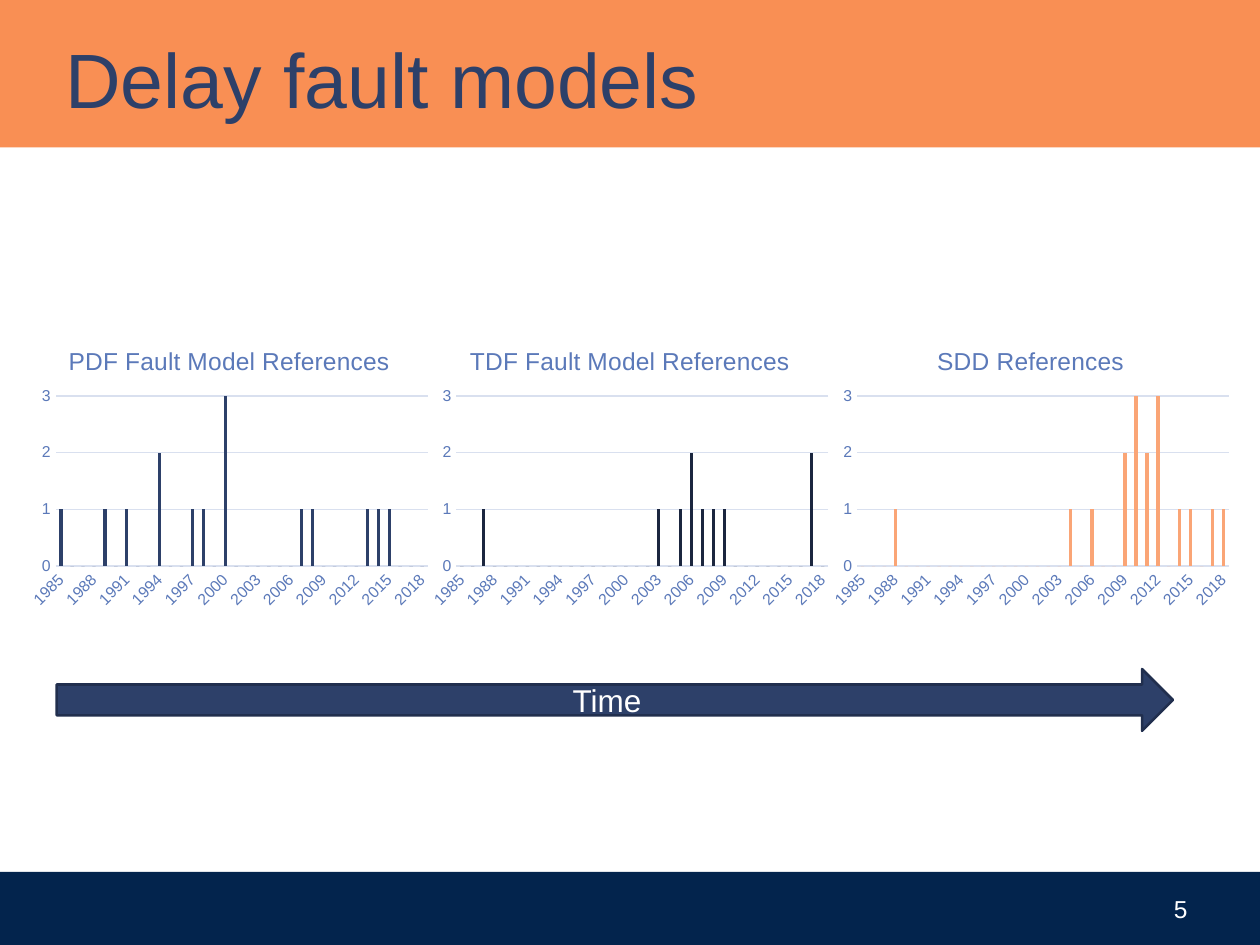
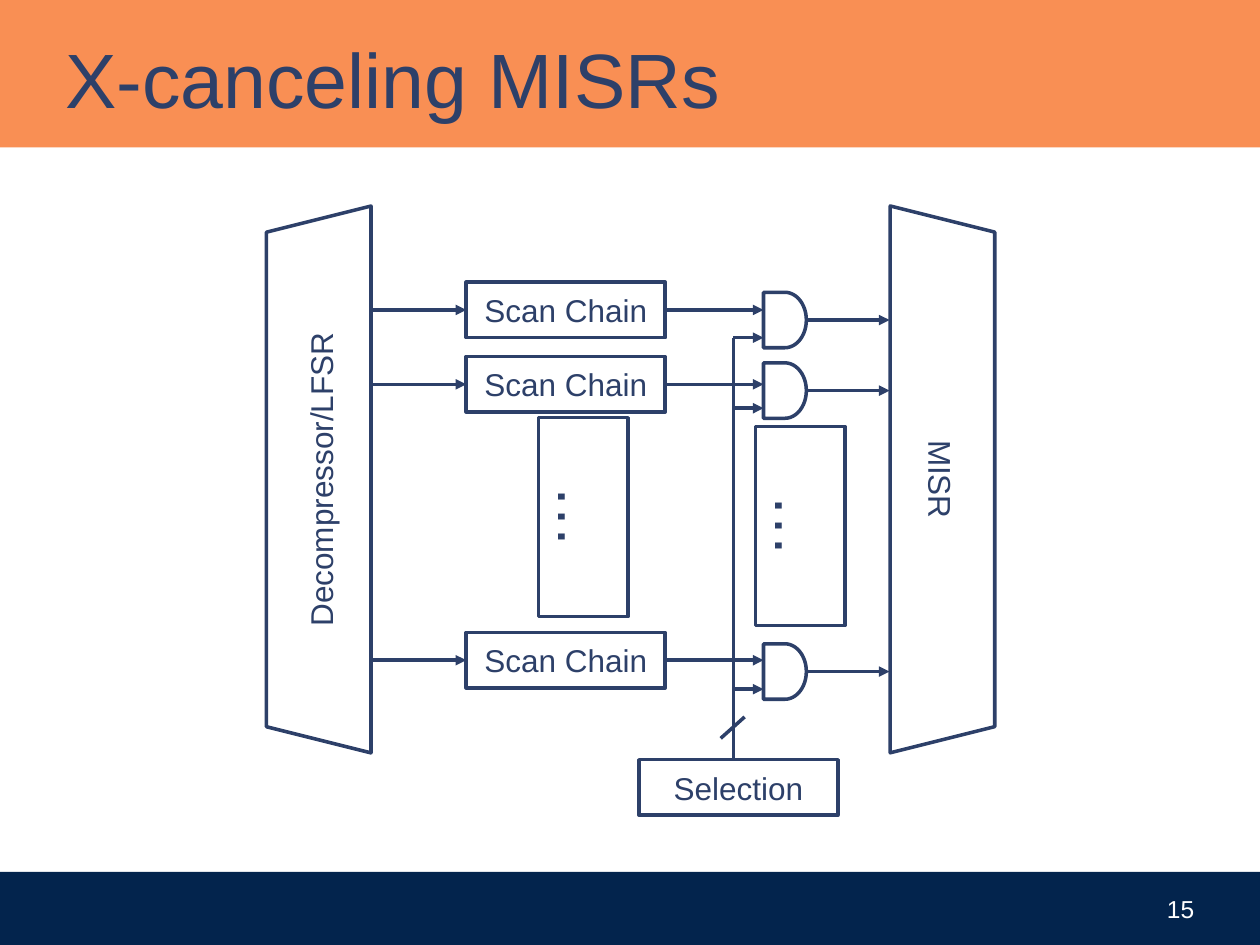
from lxml import etree
from pptx import Presentation
from pptx import util as u
from pptx.chart import data
from pptx.dml.color import RGBColor
from pptx.enum import chart as c, shapes, text
from pptx.oxml import parse_xml
from pptx.oxml.ns import nsdecls, qn

COLORS = {
    "navy": "2D4069", "dark": "1B263F", "peach": "FAA576", "band": "F86A1C",
    "footer": "03244D", "outline": "212F4E", "label": "5B79B9", "grid": "D9E0EF",
    "white": "FFFFFF",
}
FONT = "Arial"
KIND = shapes.MSO_SHAPE
FIRST_YEAR, LAST_YEAR = 1985, 2018
CHARTS = [
    ("PDF Fault Model References", "navy",
     {1985: 1, 1989: 1, 1991: 1, 1994: 2, 1997: 1, 1998: 1, 2000: 3, 2007: 1,
      2008: 1, 2013: 1, 2014: 1, 2015: 1}),
    ("TDF Fault Model References", "dark",
     {1987: 1, 2003: 1, 2005: 1, 2006: 2, 2007: 1, 2008: 1, 2009: 1, 2017: 2}),
    ("SDD References", "peach",
     {1988: 1, 2004: 1, 2006: 1, 2009: 2, 2010: 3, 2011: 2, 2012: 3, 2014: 1,
      2015: 1, 2017: 1, 2018: 1}),
]


def rgb(name):
    """Return the named colour."""
    return RGBColor.from_string(COLORS[name])


def inches(*lengths):
    """Convert numbers to lengths in inches."""
    return [u.Inches(length) for length in lengths]


def set_all(target, values):
    """Set each attribute of a target from a dict."""
    for name, value in values.items():
        setattr(target, name, value)


def style_font(font, size, color):
    """Apply the deck font with a size and colour."""
    set_all(font, {"name": FONT, "size": u.Pt(size), "bold": False})
    font.color.rgb = rgb(color)


def style_line(line, color, width):
    """Give a line its colour and width."""
    line.color.rgb = rgb(color)
    line.width = u.Pt(width)


def write(shape, words, size, color, align=text.PP_ALIGN.CENTER,
          anchor=text.MSO_ANCHOR.MIDDLE):
    """Write one styled paragraph in a shape."""
    set_all(shape.text_frame, {"word_wrap": True, "vertical_anchor": anchor})
    paragraph = shape.text_frame.paragraphs[0]
    paragraph.alignment = align
    run = paragraph.add_run()
    run.text = words
    style_font(run.font, size, color)


def add_box(slide, box, kind=KIND.RECTANGLE, fill=None, line=None, width=2, rotation=0):
    """Add a preset shape with an optional fill and outline."""
    shape = slide.shapes.add_shape(kind, *inches(*box))
    shape.shadow.inherit = False
    shape.rotation = rotation
    if fill:
        shape.fill.solid()
        shape.fill.fore_color.rgb = rgb(fill)
    else:
        shape.fill.background()
    if line:
        style_line(shape.line, line, width)
    else:
        shape.line.fill.background()
    return shape


def add_block(slide, box, words, kind=KIND.RECTANGLE, rotation=0):
    """Add an outlined, labelled block of the diagram."""
    shape = add_box(slide, box, kind, line="navy", rotation=rotation)
    write(shape, words, 18, "navy")
    return shape


def add_ellipsis(slide, box):
    """Add an upright box that stands for the omitted rows."""
    shape = add_box(slide, box, line="navy", rotation=90)
    write(shape, "…", 36, "navy", anchor=text.MSO_ANCHOR.TOP)
    shape.text_frame.auto_size = text.MSO_AUTO_SIZE.SHAPE_TO_FIT_TEXT


def add_wire(slide, start, end, arrow=True):
    """Add a straight wire, with an arrowhead if wanted."""
    wire = slide.shapes.add_connector(shapes.MSO_CONNECTOR.STRAIGHT, *inches(*start, *end))
    style_line(wire.line, "navy", 2)
    if arrow:
        etree.SubElement(wire.line._get_or_add_ln(), qn("a:tailEnd"), type="triangle")
    etree.SubElement(wire._element.spPr, qn("a:effectLst"))
    return wire


def add_frame(presentation, title, number):
    """Add a slide with title band, title, footer and slide number."""
    slide = presentation.slides.add_slide(presentation.slide_layouts[6])
    add_box(slide, (0, 6.92, 10, 0.58), fill="footer")
    write(slide.shapes.add_textbox(*inches(9.08, 7, 0.58, 0.42)), str(number), 14, "white")
    band = add_box(slide, (0, 0, 10, 1.17), fill="band")
    color = band._element.spPr.find(qn("a:solidFill"))[0]
    etree.SubElement(color, qn("a:alpha"), val="75000")
    heading = slide.shapes.add_textbox(*inches(0.42, 0.08, 9.17, 1.08))
    write(heading, title, 44, "navy", text.PP_ALIGN.LEFT)
    return slide


def set_plot_layout(chart, x, y, width, height):
    """Fix the inner plot area as fractions of the chart."""
    plot_area = chart._chartSpace.chart.plotArea
    for layout in plot_area.findall(qn("c:layout")):
        plot_area.remove(layout)
    plot_area.insert(0, parse_xml(
        f'<c:layout {nsdecls("c")}><c:manualLayout><c:layoutTarget val="inner"/>'
        '<c:xMode val="edge"/><c:yMode val="edge"/>'
        f'<c:x val="{x}"/><c:y val="{y}"/><c:w val="{width}"/><c:h val="{height}"/>'
        '</c:manualLayout></c:layout>'))


def add_reference_chart(slide, box, title, color, counts):
    """Add a column chart of references per year."""
    years = range(FIRST_YEAR, LAST_YEAR + 1)
    chart_data = data.CategoryChartData()
    chart_data.categories = [str(year) for year in years]
    chart_data.add_series("Series 1", [counts.get(year, 0) for year in years])
    chart = slide.shapes.add_chart(
        c.XL_CHART_TYPE.COLUMN_CLUSTERED, *inches(*box), chart_data).chart
    style_font(chart.font, 10, "navy")
    set_all(chart, {"has_legend": False, "has_title": True})
    chart.chart_title.include_in_layout = False
    heading = chart.chart_title.text_frame.paragraphs[0]
    run = heading.add_run()
    run.text = title
    style_font(run.font, 14, "label")
    set_all(chart.plots[0], {"gap_width": 219, "overlap": -27, "vary_by_categories": False})
    bars = chart.plots[0].series[0].format.fill
    bars.solid()
    bars.fore_color.rgb = rgb(color)
    for axis in (chart.category_axis, chart.value_axis):
        axis.major_tick_mark = axis.minor_tick_mark = c.XL_TICK_MARK.NONE
        style_font(axis.tick_labels.font, 9, "label")
    style_line(chart.category_axis.format.line, "grid", 0.75)
    chart.category_axis._element.txPr.bodyPr.set("rot", "-2700000")
    set_all(chart.value_axis, {"minimum_scale": 0, "maximum_scale": 3, "major_unit": 1,
                               "has_major_gridlines": True})
    chart.value_axis.format.line.fill.background()
    style_line(chart.value_axis.major_gridlines.format.line, "grid", 0.75)
    set_plot_layout(chart, 0.08, 0.235, 0.9, 0.595)


def build_fault_models(presentation):
    """Build the slide with three charts above a time arrow."""
    slide = add_frame(presentation, "Delay fault models", 5)
    for index, (title, color, counts) in enumerate(CHARTS):
        add_reference_chart(slide, (0.18 + 3.18 * index, 2.61, 3.28, 2.27),
                            title, color, counts)
    arrow = add_box(slide, (0.45, 5.31, 8.86, 0.49), KIND.RIGHT_ARROW,
                    "navy", "outline", 1.5)
    write(arrow, "Time", 18, "white")


def add_scan_row(slide, left, chain_top, gate_top):
    """Add one scan chain with its gate and wires, from the decompressor on."""
    chain_left, gate_left, bus = left + 0.77, left + 3.13, left + 2.89
    middle = chain_top + 0.22
    chain = add_block(slide, (chain_left, chain_top, 1.58, 0.44), "Scan Chain")
    gate = add_box(slide, (gate_left, gate_top, 0.34, 0.44),
                   KIND.FLOWCHART_DELAY, line="navy")
    feed = add_wire(slide, (left, middle), (chain_left, middle))
    feed.end_connect(chain, 1)
    scan_out = add_wire(slide, (chain_left + 1.58, middle), (gate_left, middle))
    scan_out.begin_connect(chain, 3)
    add_wire(slide, (bus, gate_top + 0.36), (gate_left, gate_top + 0.36))
    output = add_wire(slide, (gate_left + 0.34, gate_top + 0.22),
                      (left + 4.13, gate_top + 0.22))
    output.begin_connect(gate, 3)


def build_misr(presentation):
    """Build the slide with the X-canceling diagram."""
    slide = add_frame(presentation, "X-canceling MISRs", 15)
    for chain_top, gate_top in ((2.24, 2.32), (2.83, 2.88), (5.02, 5.11)):
        add_scan_row(slide, 2.93, chain_top, gate_top)
    for left, top in ((3.84, 3.75), (5.56, 3.82)):
        add_ellipsis(slide, (left, top, 1.58, 0.71))
    for left, words, rotation in ((0.36, "Decompressor/LFSR", 270), (5.31, "MISR", 90)):
        add_block(slide, (left, 3.39, 4.34, 0.83), words, KIND.TRAPEZOID, rotation)
    add_block(slide, (5.07, 6.03, 1.58, 0.44), "Selection")
    add_wire(slide, (5.82, 2.68), (5.82, 6.03), arrow=False)
    add_wire(slide, (5.72, 5.86), (5.91, 5.69), arrow=False)


def main():
    """Build and save the presentation."""
    presentation = Presentation()
    set_all(presentation, {"slide_width": u.Inches(10), "slide_height": u.Inches(7.5)})
    build_fault_models(presentation)
    build_misr(presentation)
    presentation.save("out.pptx")


if __name__ == "__main__":
    main()
